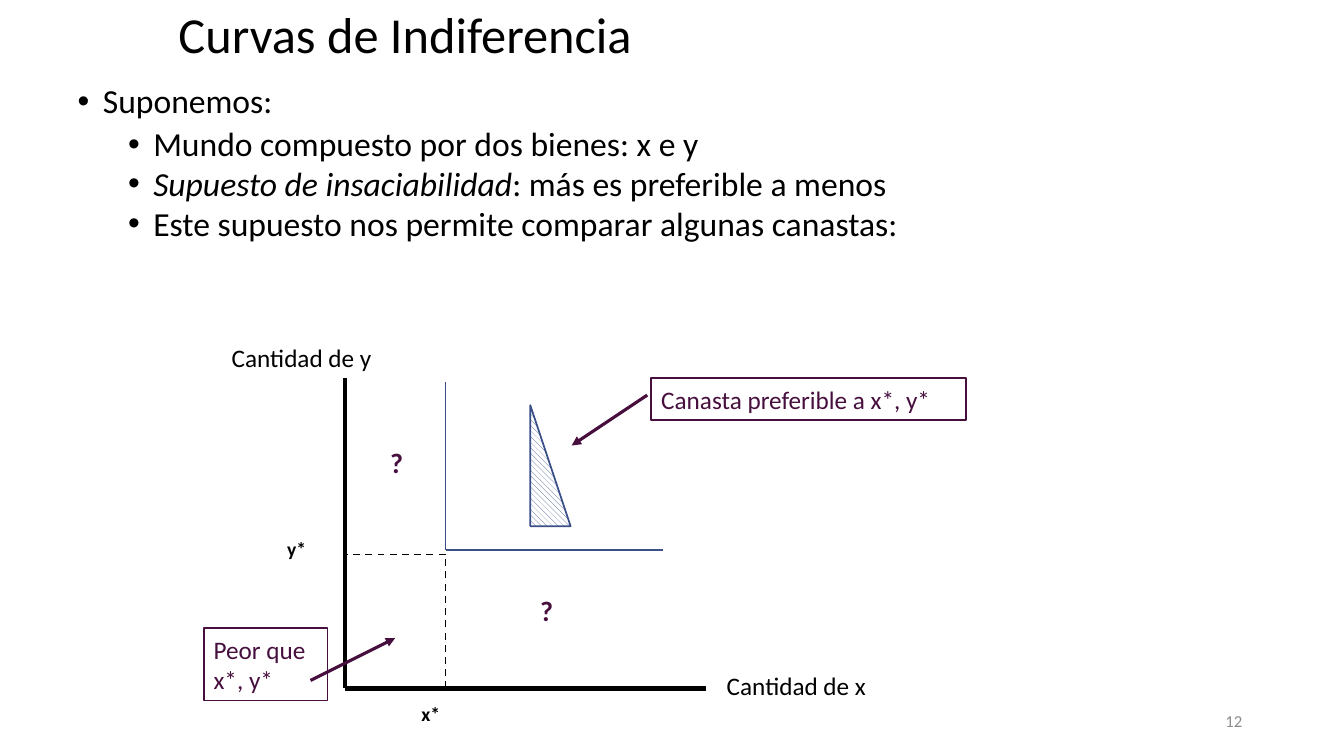
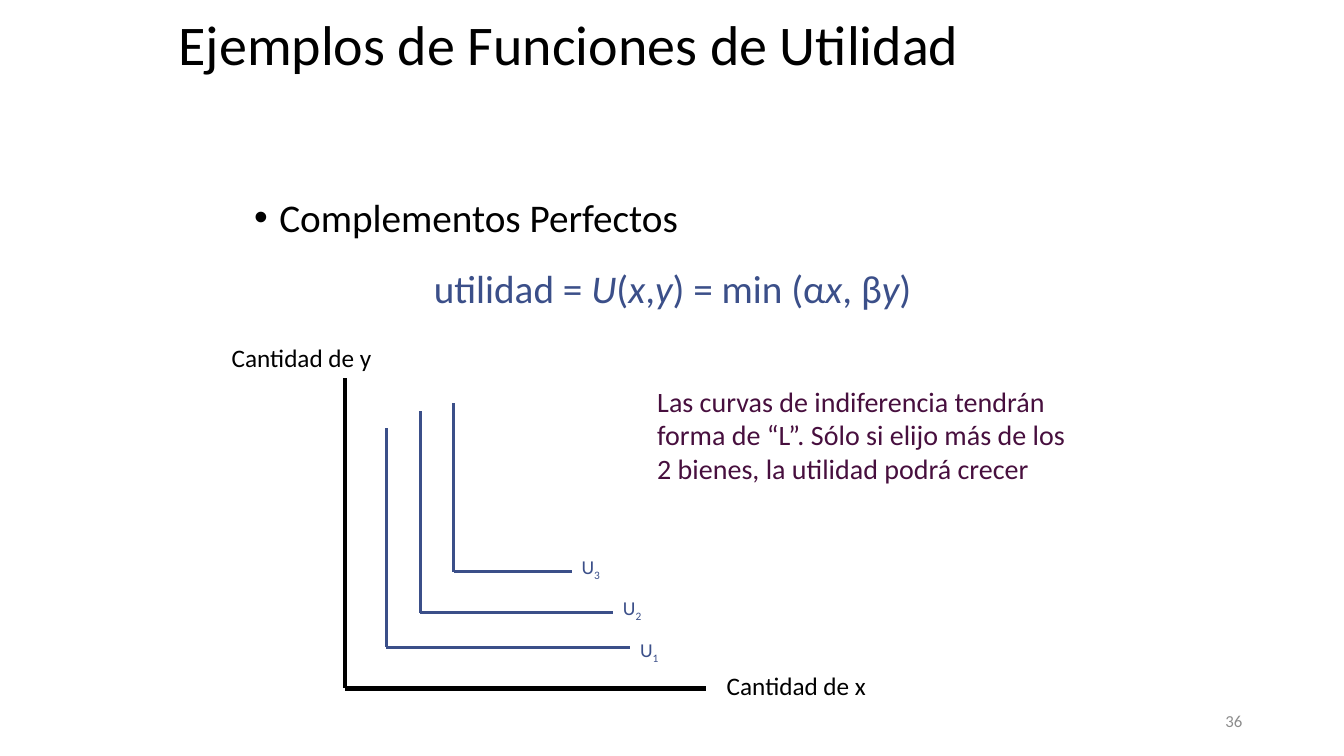
import dataclasses
import lxml.etree
import pptx
import pptx.dml.color
import pptx.enum.dml
import pptx.enum.shapes
import pptx.enum.text
import pptx.oxml.ns
import pptx.util

Inches = pptx.util.Inches
Pt = pptx.util.Pt
Align = pptx.enum.text.PP_ALIGN
Shape = pptx.enum.shapes.MSO_SHAPE
qn = pptx.oxml.ns.qn


@dataclasses.dataclass(frozen=True)
class Theme:
    font: str = "Calibri"
    black: str = "000000"
    white: str = "FFFFFF"
    gray: str = "8C8C8C"
    blue: str = "3B4F89"
    plum: str = "470F3E"
    page: int = 12
    mark: int = 14
    label: int = 18
    note: int = 20
    list: int = 24
    lead: int = 28
    thin: float = 1.25
    bold: float = 2.25
    axis: float = 3


class Deck:
    """Hold the theme and the current slide, and draw each kind of element."""

    def __init__(self):
        self.theme = Theme()
        self.show = pptx.Presentation()
        self.show.slide_width = Inches(13.33)
        self.show.slide_height = Inches(7.5)
        self.slide = None

    def color(self, code):
        return pptx.dml.color.RGBColor.from_string(code)

    def style(self, para, size, color, bold=False):
        font = para.font
        font.name = self.theme.font
        font.size = Pt(size)
        font.bold = bold
        font.color.rgb = self.color(color)

    def place(self, shape, box):
        shape.left, shape.top, shape.width, shape.height = map(Inches, box)

    def start(self, title, box, size, page):
        self.slide = self.show.slides.add_slide(self.show.slide_layouts[1])
        head = self.slide.shapes.title
        self.place(head, box)
        head.text_frame.auto_size = pptx.enum.text.MSO_AUTO_SIZE.NONE
        head.text_frame.text = title
        para = head.text_frame.paragraphs[0]
        para.alignment = Align.LEFT
        para.line_spacing = 0.9
        self.style(para, size, self.theme.black)
        self.text(page, (9.42, 6.95, 3, 0.4), self.theme.page,
                  self.theme.gray, align=Align.RIGHT)

    def body(self, box):
        shape = self.slide.placeholders[1]
        self.place(shape, box)
        shape.text_frame.auto_size = pptx.enum.text.MSO_AUTO_SIZE.NONE
        return shape.text_frame

    def item(self, frame, text, size, color, level=0, lines=0.9,
             bullet=True, align=Align.LEFT):
        para = frame.paragraphs[0]
        if para.runs:
            para = frame.add_paragraph()
        props = para._p.get_or_add_pPr()
        props.set("marL", str(Inches(0.25 + 0.5 * level)))
        props.set("indent", str(Inches(-0.25)))
        if bullet:
            lxml.etree.SubElement(props, qn("a:buChar"), char="•")
        else:
            lxml.etree.SubElement(props, qn("a:buNone"))
        para.level = level
        para.alignment = align
        para.line_spacing = lines
        para.space_before = Pt(5 if level else 10)
        for index, part in enumerate(text.split("_")):
            if part:
                run = para.add_run()
                run.text = part
                if index % 2:
                    run.font.italic = True
        self.style(para, size, color)

    def label(self, shape, text, size, color, bold=False, align=Align.LEFT):
        frame = shape.text_frame
        frame.word_wrap = True
        frame.vertical_anchor = pptx.enum.text.MSO_ANCHOR.MIDDLE
        frame.text = text
        for para in frame.paragraphs:
            para.alignment = align
            self.style(para, size, color, bold)
        return frame.paragraphs[0]

    def text(self, text, box, size, color, bold=False, align=Align.LEFT):
        shape = self.slide.shapes.add_textbox(*map(Inches, box))
        return self.label(shape, text, size, color, bold, align)

    def shape(self, kind, box, color):
        shape = self.slide.shapes.add_shape(kind, *map(Inches, box))
        shape.shadow.inherit = False
        shape.fill.background()
        shape.line.color.rgb = self.color(color)
        shape.line.width = Pt(self.theme.thin)
        return shape

    def frame(self, text, box):
        shape = self.shape(Shape.RECTANGLE, box, self.theme.plum)
        self.label(shape, text, self.theme.label, self.theme.plum)

    def hatch(self, box):
        fill = self.shape(Shape.RIGHT_TRIANGLE, box, self.theme.blue).fill
        fill.patterned()
        fill.pattern = pptx.enum.dml.MSO_PATTERN.WIDE_DOWNWARD_DIAGONAL
        fill.fore_color.rgb = self.color(self.theme.blue)
        fill.back_color.rgb = self.color(self.theme.white)

    def line(self, start, end, color, width, dash=False, arrow=False):
        line = self.slide.shapes.add_connector(
            pptx.enum.shapes.MSO_CONNECTOR.STRAIGHT,
            *map(Inches, start + end))
        line.line.color.rgb = self.color(color)
        line.line.width = Pt(width)
        if dash:
            line.line.dash_style = pptx.enum.dml.MSO_LINE.DASH
        props = line._element.spPr
        if arrow:
            lxml.etree.SubElement(props.find(qn("a:ln")),
                                  qn("a:tailEnd"), type="triangle")
        lxml.etree.SubElement(props, qn("a:effectLst"))

    def corner(self, top, knee, right, color, width, dash=False):
        self.line((knee[0], top), knee, color, width, dash)
        self.line(knee, (right, knee[1]), color, width, dash)

    def axes(self):
        theme = self.theme
        self.corner(3.75, (3.42, 6.83), 7, theme.black, theme.axis)
        for text, left, top in (("Cantidad de x", 7.11, 6.6),
                                ("Cantidad de y", 2.2, 3.35)):
            self.text(text, (left, top, 1.74, 0.4), theme.label, theme.black)

    def curve(self, name, top, knee, right, height):
        theme = self.theme
        self.corner(top, knee, right, theme.blue, theme.bold)
        para = self.text("U", (right, height, 0.58, 0.33),
                         theme.mark, theme.blue)
        run = para.add_run()
        run.text = name
        run.font._element.set("baseline", "-25000")


def basket(deck):
    theme = deck.theme
    deck.start("Curvas de Indiferencia", (1.67, 0.08, 10, 0.58), 36, "12")
    body = deck.body((0.67, 0.79, 11.5, 2.34))
    for text, level, lines in (
            ("Suponemos:", 0, 0.9),
            ("Mundo compuesto por dos bienes: x e y", 1, 0.9),
            ("_Supuesto de insaciabilidad_: más es preferible a menos", 1, 0.8),
            ("Este supuesto nos permite comparar algunas canastas:", 1, 0.8)):
        deck.item(body, text, theme.list, theme.black, level, lines)
    deck.axes()
    for text, left, top in (("x*", 4.08, 6.92), ("y*", 2.75, 5.28)):
        deck.text(text, (left, top, 0.58, 0.33), theme.mark, theme.black, True)
    deck.corner(6.83, (4.42, 5.5), 3.42, theme.black, theme.thin, True)
    deck.hatch((5.26, 4.02, 0.4, 1.2))
    deck.corner(3.79, (4.42, 5.46), 6.58, theme.blue, theme.thin)
    for left, top in ((3.77, 4.37), (5.26, 5.84)):
        deck.text("?", (left, top, 0.37, 0.43), theme.note, theme.plum, True)
    deck.frame("Canasta preferible a x*, y*", (6.46, 3.75, 3.12, 0.42))
    deck.frame("Peor que\nx*, y*", (2.02, 6.23, 1.23, 0.72))
    for start, end in (((6.42, 3.92), (5.67, 4.42)),
                       ((3.08, 6.75), (3.92, 6.33))):
        deck.line(start, end, theme.plum, theme.bold, arrow=True)


def utility(deck):
    theme = deck.theme
    deck.start("Ejemplos de Funciones de Utilidad",
               (1.67, 0.12, 10, 0.71), 40, "36")
    body = deck.body((2.42, 1.92, 8.5, 1.25))
    deck.item(body, "Complementos Perfectos", theme.lead, theme.black)
    deck.item(body, "utilidad = _U_(_x_,_y_) = min (α_x_, β_y_)", theme.lead,
              theme.blue, lines=1.2, bullet=False, align=Align.CENTER)
    deck.axes()
    deck.text("Las curvas de indiferencia tendrán\n"
              "forma de “L”. Sólo si elijo más de los\n"
              "2 bienes, la utilidad podrá crecer",
              (6.42, 3.76, 4.69, 1.1), theme.note, theme.plum)
    for name, top, knee, right, height in (
            ("1", 4.25, (3.83, 6.42), 6.25, 6.3),
            ("2", 4.08, (4.17, 6.08), 6.08, 5.88),
            ("3", 4, (4.5, 5.67), 5.67, 5.47)):
        deck.curve(name, top, knee, right, height)


def main():
    deck = Deck()
    basket(deck)
    utility(deck)
    deck.show.save("out.pptx")


if __name__ == "__main__":
    main()
